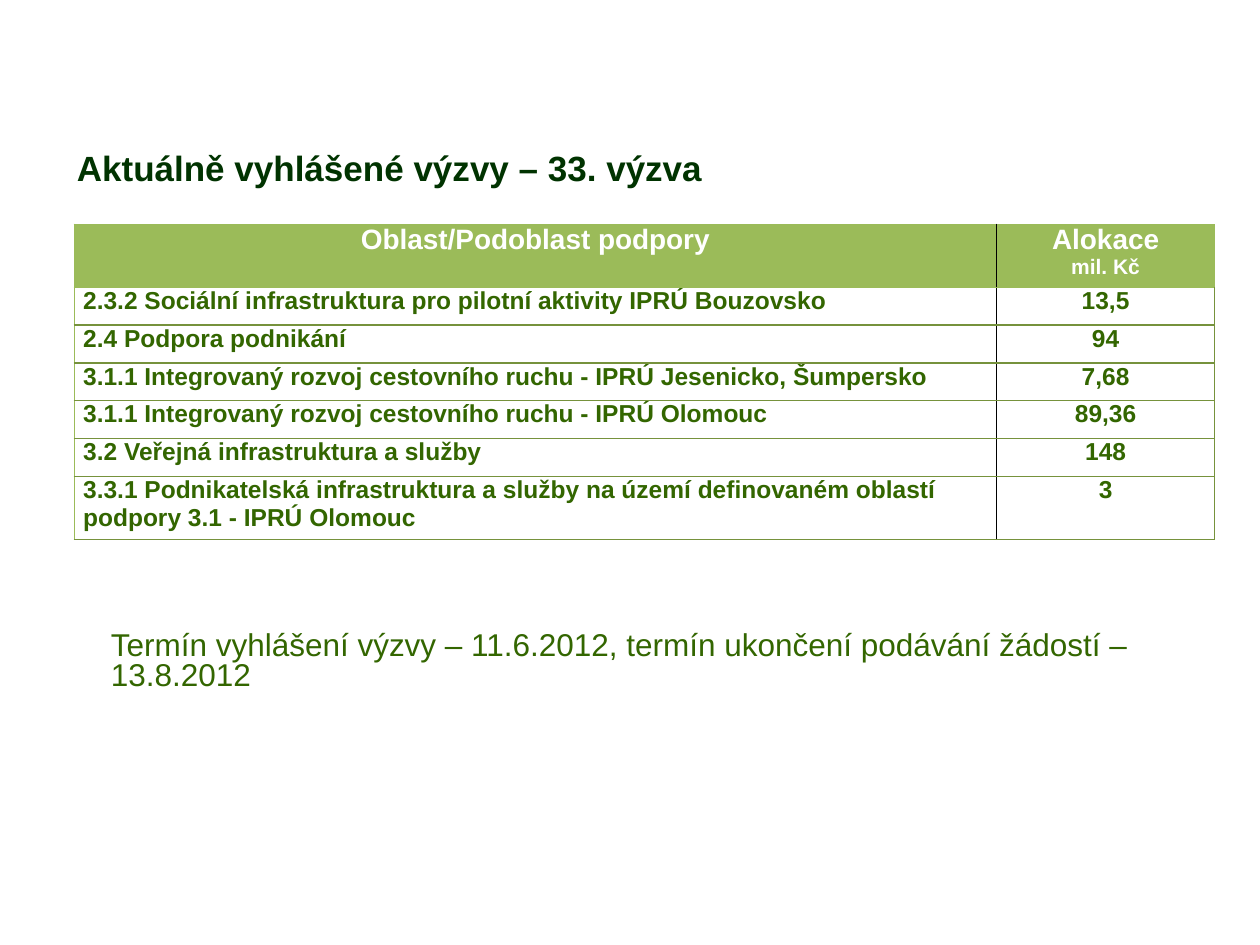
from lxml import etree
from pptx import Presentation, util as u
from pptx.dml.color import RGBColor
from pptx.enum import text
from pptx.oxml.ns import qn

# Content
TITLE = "Aktuálně vyhlášené výzvy – 33. výzva"
HEADER = ["Oblast/Podoblast podpory", "Alokace"]
UNIT = "mil. Kč"
AREAS = [
    ("2.3.2 Sociální infrastruktura pro pilotní aktivity IPRÚ Bouzovsko", "13,5"),
    ("2.4 Podpora podnikání", "94"),
    ("3.1.1 Integrovaný rozvoj cestovního ruchu - IPRÚ Jesenicko, Šumpersko", "7,68"),
    ("3.1.1 Integrovaný rozvoj cestovního ruchu - IPRÚ Olomouc", "89,36"),
    ("3.2 Veřejná infrastruktura a služby", "148"),
    ("3.3.1 Podnikatelská infrastruktura a služby na území definovaném oblastí "
     "podpory 3.1 - IPRÚ Olomouc", "3"),
]
DATES = "Termín vyhlášení výzvy – 11.6.2012, termín ukončení podávání žádostí – 13.8.2012"

# Format
COLORS = {"title": "003300", "body": "336600", "header": "9BBB59",
          "rule": "76923C", "divider": "000000", "white": "FFFFFF"}
COLUMNS = [7.32, 1.73]
TALL_ROW, ROW = 0.5, 0.3
ROWS = [TALL_ROW] + [ROW] * (len(AREAS) - 1) + [TALL_ROW]
LEFT, CENTER = text.PP_ALIGN.LEFT, text.PP_ALIGN.CENTER


def write(paragraph, words, size, color, bold=True, align=LEFT, spacing=None):
    paragraph.text = words
    paragraph.alignment = align
    paragraph.space_before = u.Pt(0)
    if spacing:
        paragraph.line_spacing = spacing
    font = paragraph.runs[0].font
    font.name, font.size, font.bold = "Arial", u.Pt(size), bold
    font.color.rgb = RGBColor.from_string(COLORS[color])


def place(shape, left, top, width, height, inset_left, inset_top):
    shape.left, shape.top = u.Inches(left), u.Inches(top)
    shape.width, shape.height = u.Inches(width), u.Inches(height)
    frame = shape.text_frame
    frame.word_wrap = True
    frame.auto_size = text.MSO_AUTO_SIZE.NONE
    frame.vertical_anchor = text.MSO_ANCHOR.TOP
    frame.margin_left, frame.margin_top = u.Inches(inset_left), u.Inches(inset_top)
    return frame.paragraphs[0]


def add_borders(cell, **sides):
    properties = cell._tc.get_or_add_tcPr()
    for side in "LRTB":
        line = etree.SubElement(properties, qn(f"a:ln{side}"), w=str(u.Pt(1)))
        if sides[side]:
            fill = etree.SubElement(line, qn("a:solidFill"))
            etree.SubElement(fill, qn("a:srgbClr"), val=COLORS[sides[side]])
        else:
            etree.SubElement(line, qn("a:noFill"))


presentation = Presentation()
presentation.slide_width, presentation.slide_height = u.Inches(10), u.Inches(7.5)
slide = presentation.slides.add_slide(presentation.slide_layouts[5])

# Title
write(place(slide.shapes.title, 0.43, 1.15, 9.21, 0.5, 0.18, 0.08),
      TITLE, 20, "title", spacing=0.8)

# Table of support areas
table = slide.shapes.add_table(
    len(ROWS), len(COLUMNS), u.Inches(0.59), u.Inches(1.78),
    u.Inches(sum(COLUMNS)), u.Inches(sum(ROWS))).table
for column, width in zip(table.columns, COLUMNS):
    column.width = u.Inches(width)
for row, height in zip(table.rows, ROWS):
    row.height = u.Inches(height)

for i, values in enumerate([HEADER, *AREAS]):
    is_header = i == 0
    for j, value in enumerate(values):
        cell = table.cell(i, j)
        cell.margin_left = cell.margin_right = u.Inches(0.07)
        cell.margin_top = cell.margin_bottom = 0
        add_borders(cell,
                    L="divider" if j else "header",
                    R=("divider" if j == 0 else None if is_header else "rule"),
                    T="header" if i < 2 else "rule",
                    B="header" if is_header else "rule")
        if is_header:
            cell.fill.solid()
            cell.fill.fore_color.rgb = RGBColor.from_string(COLORS["header"])
        else:
            cell.fill.background()
        write(cell.text_frame.paragraphs[0], value,
              16 if is_header else 14, "white" if is_header else "body",
              align=CENTER if is_header or j else LEFT)
write(table.cell(0, 1).text_frame.add_paragraph(), UNIT, 12, "white", align=CENTER)

# Dates of the call
note = slide.shapes.add_textbox(0, 0, 0, 0)
write(place(note, 0.2, 4.62, 9.65, 1.1, 0.68, 0.4),
      DATES, 18, "body", bold=False, spacing=0.8)

presentation.save("out.pptx")
